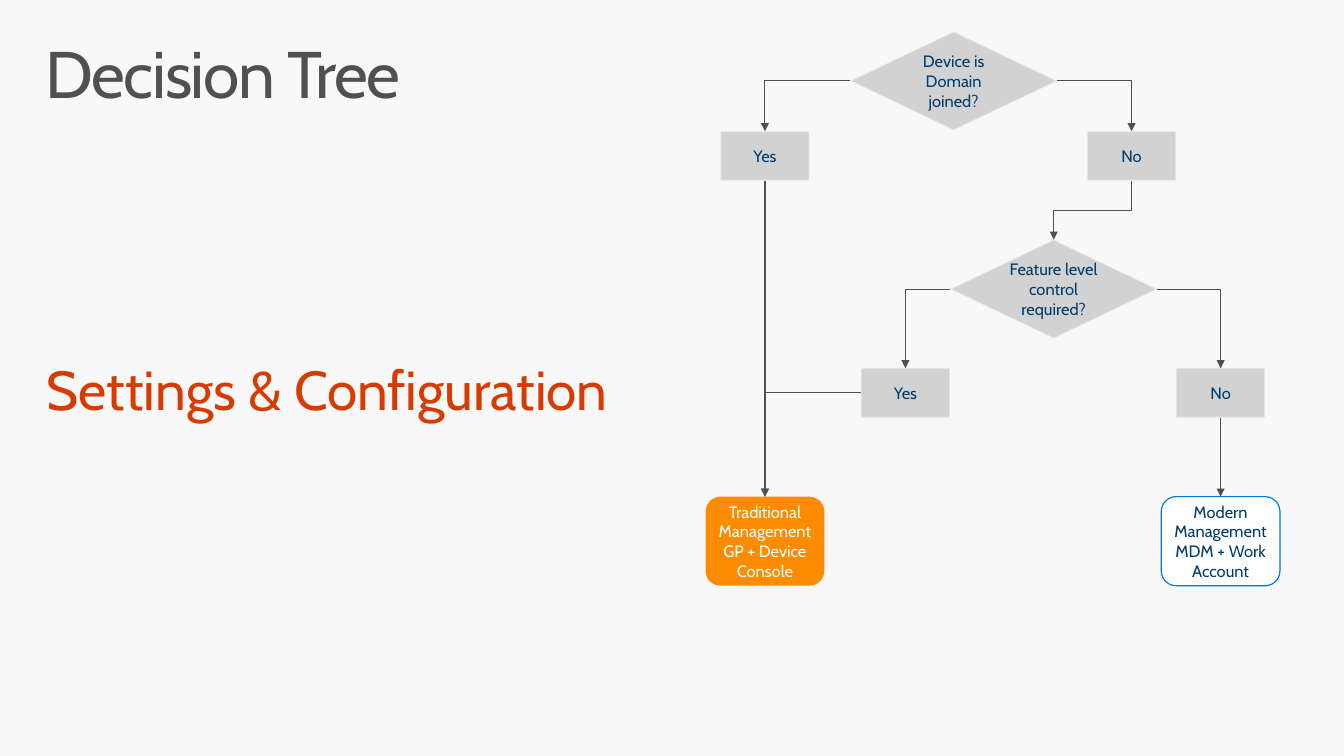
from lxml import etree
from pptx import Presentation
from pptx.dml.color import RGBColor
from pptx.enum.shapes import MSO_CONNECTOR, MSO_SHAPE
from pptx.enum.text import MSO_ANCHOR, PP_ALIGN
from pptx.oxml.ns import qn
from pptx.util import Cm, Pt

STRAIGHT, ELBOW = MSO_CONNECTOR.STRAIGHT, MSO_CONNECTOR.ELBOW
DIAMOND = MSO_SHAPE.FLOWCHART_DECISION
BOX = MSO_SHAPE.RECTANGLE
CARD = MSO_SHAPE.FLOWCHART_ALTERNATE_PROCESS
MIDDLE, CENTER = MSO_ANCHOR.MIDDLE, PP_ALIGN.CENTER
TOP, LEFT, BOTTOM, RIGHT = range(4)

FONT = "Cabin"
COLORS = {
    "back": "F8F8F8", "dark": "505050", "red": "D83B01", "gray": "D2D2D2",
    "edge": "F9F9F9", "navy": "003C6C", "orange": "FF8C00",
    "white": "FFFFFF", "blue": "0078D7",
}
HEADS = [
    ("Decision Tree", (0.76, 0.81, 33.02, 2.54), 48, "dark", -100),
    ("Settings & Configuration", (0.79, 9.07, 17.58, 2.06), 40, "red", 0),
]
SIZES = {DIAMOND: (5.33, 2.54), BOX: (2.29, 1.27), CARD: (3.05, 2.29)}
STYLES = {
    "step": ("gray", "edge", 1.35, "navy"),
    "old": ("orange", None, 0, "white"),
    "new": ("white", "blue", 0.85, "navy"),
}
COLS = {"old": 19.66, "yes": 23.27, "top": 24.51,
        "mid": 27.08, "no": 29.08, "new": 31.37}
ROWS = [2.08, 4.01, 7.43, 10.1, 13.91]
NODES = {
    "domain": (DIAMOND, "top", 0, "step", ["Device is Domain joined?"]),
    "joined": (BOX, "old", 1, "step", ["Yes"]),
    "free": (BOX, "no", 1, "step", ["No"]),
    "feature": (DIAMOND, "mid", 2, "step", ["Feature level control required?"]),
    "needed": (BOX, "yes", 3, "step", ["Yes"]),
    "simple": (BOX, "new", 3, "step", ["No"]),
    "classic": (CARD, "old", 4, "old",
                ["Traditional Management", "GP + Device Console"]),
    "modern": (CARD, "new", 4, "new",
               ["Modern Management", "MDM + Work Account"]),
}
LINKS = [
    ("domain", LEFT, "joined", "corner"),
    ("domain", RIGHT, "free", "corner"),
    ("joined", BOTTOM, "classic", "straight"),
    ("free", BOTTOM, "feature", "step"),
    ("feature", LEFT, "needed", "corner"),
    ("feature", RIGHT, "simple", "corner"),
    ("needed", LEFT, "classic", "corner"),
    ("simple", BOTTOM, "modern", "straight"),
]


def color(name):
    return RGBColor.from_string(COLORS[name])


def write(para, text, size, tint):
    run = para.add_run()
    run.text = text
    run.font.name = FONT
    run.font.size = Pt(size)
    run.font.color.rgb = color(tint)
    return run


def add_head(slide, text, place, size, tint, gap):
    frame = slide.shapes.add_textbox(*map(Cm, place)).text_frame
    frame.word_wrap = True
    frame.margin_left = frame.margin_right = Cm(0.41)
    frame.margin_top = frame.margin_bottom = Cm(0.25)
    para = frame.paragraphs[0]
    para.line_spacing = 0.9
    run = write(para, text, size, tint)
    if gap:
        run.font._element.set("spc", str(gap))


def add_node(slide, kind, col, row, style, lines):
    wide, high = SIZES[kind]
    place = (COLS[col] - wide / 2, ROWS[row] - high / 2, wide, high)
    node = slide.shapes.add_shape(kind, *map(Cm, place))
    node.shadow.inherit = False
    fill, edge, width, tint = STYLES[style]
    node.fill.solid()
    node.fill.fore_color.rgb = color(fill)
    if edge:
        node.line.color.rgb = color(edge)
        node.line.width = Pt(width)
    else:
        node.line.fill.background()
    if edge == "edge":
        shade = node.line._ln.find(".//" + qn("a:srgbClr"))
        etree.SubElement(shade, qn("a:alpha"), val="50000")
    frame = node.text_frame
    frame.word_wrap = True
    frame.vertical_anchor = MIDDLE
    frame.margin_left = frame.margin_right = 0
    frame.margin_top = frame.margin_bottom = Cm(0.13)
    for i, text in enumerate(lines):
        para = frame.add_paragraph() if i else frame.paragraphs[0]
        para.alignment = CENTER
        write(para, text, 12, tint)
    return node


def add_link(slide, start, side, end, form):
    kind = STRAIGHT if form == "straight" else ELBOW
    link = slide.shapes.add_connector(kind, 0, 0, 0, 0)
    link.begin_connect(start, side)
    link.end_connect(end, TOP)
    link.line.color.rgb = color("dark")
    link.line.width = Pt(0.75)
    props = link._element.spPr
    if form == "corner":
        props.find(qn("a:prstGeom")).set("prst", "bentConnector2")
    if form == "step":
        wide, high = link.width, link.height
        link.left += (wide - high) // 2
        link.top += (high - wide) // 2
        link.width, link.height = high, wide
        frame = props.find(qn("a:xfrm"))
        frame.attrib.pop("flipH", None)
        frame.set("rot", "5400000")
    etree.SubElement(link.line._ln, qn("a:tailEnd"), type="triangle")
    etree.SubElement(props, qn("a:effectLst"))


def main():
    deck = Presentation()
    deck.slide_width, deck.slide_height = Cm(34.54), Cm(19.43)
    slide = deck.slides.add_slide(deck.slide_layouts[6])
    slide.background.fill.solid()
    slide.background.fill.fore_color.rgb = color("back")
    for head in HEADS:
        add_head(slide, *head)
    nodes = {name: add_node(slide, *node) for name, node in NODES.items()}
    for start, side, end, form in LINKS:
        add_link(slide, nodes[start], side, nodes[end], form)
    deck.save("out.pptx")


if __name__ == "__main__":
    main()
